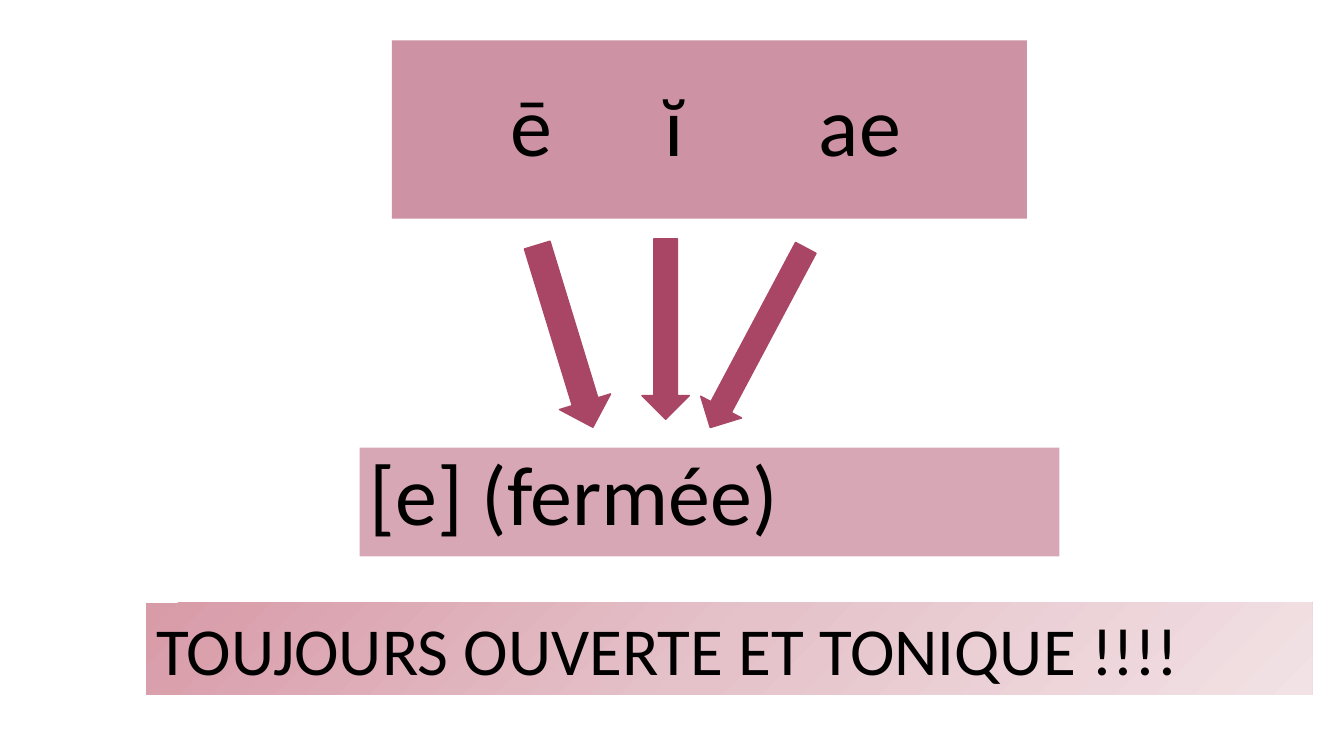
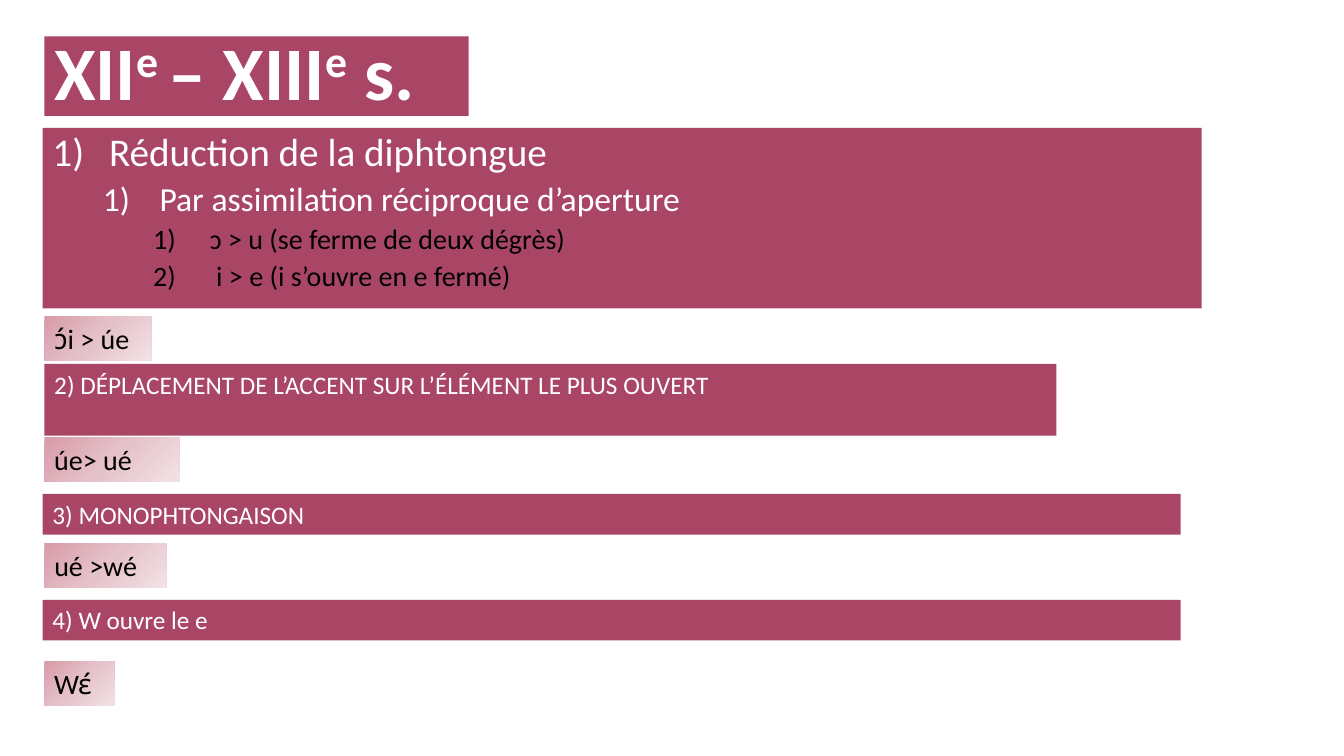
from lxml.etree import SubElement
from pptx import Presentation
from pptx.dml.color import RGBColor as RGB
from pptx.enum.shapes import MSO_SHAPE as SHAPE
from pptx.enum.text import MSO_ANCHOR as ANCHOR, PP_ALIGN as ALIGN
from pptx.oxml import parse_xml
from pptx.oxml.ns import nsdecls, qn
from pptx.util import Pt

COLORS = {
    "rose": "AA4665",
    "pale_start": "D89BA8",
    "pale_mid": "E5C2CA",
    "pale_end": "F2E2E5",
    "black": "000000",
    "white": "FFFFFF",
}


class Deck:
    font = "Calibri"
    gradient = ((0, "pale_start"), (50, "pale_mid"), (100, "pale_end"))

    def __init__(self):
        self.prs = Presentation()
        self.prs.slide_width, self.prs.slide_height = Pt(960), Pt(540)
        self.s = None

    def slide(self):
        self.s = self.prs.slides.add_slide(self.prs.slide_layouts[6])

    def shape(self, kind, x, y, w, h, alpha=None):
        sp = self.s.shapes.add_shape(kind, Pt(x), Pt(y), Pt(w), Pt(h))
        sp.shadow.inherit = False
        sp.fill.solid()
        sp.fill.fore_color.rgb = RGB.from_string(COLORS["rose"])
        sp.line.fill.background()
        if alpha:
            color = sp._element.spPr.find(qn("a:solidFill"))[0]
            SubElement(color, qn("a:alpha")).set("val", str(alpha * 1000))
        return sp

    def style(self, p, size, color, bold=False):
        for r in p.runs:
            r.font.name, r.font.size, r.font.bold = self.font, Pt(size), bold
            r.font.color.rgb = RGB.from_string(COLORS[color])

    def band(self, x, y, w, h, text, size, color="white", alpha=None,
             anchor=ANCHOR.TOP, spacing=1.0):
        sp = self.shape(SHAPE.RECTANGLE, x, y, w, h, alpha)
        tf = sp.text_frame
        tf.word_wrap = True
        tf.vertical_anchor = anchor
        tf.text = text
        p = tf.paragraphs[0]
        p.alignment, p.line_spacing = ALIGN.LEFT, spacing
        self.style(p, size, color)
        return sp

    def pale_band(self, x, y, w, h, text, size):
        sp = self.band(x, y, w, h, text, size, "black")
        stops = "".join(
            f'<a:gs pos="{pos * 1000}"><a:srgbClr val="{COLORS[name]}"/></a:gs>'
            for pos, name in self.gradient)
        spPr = sp._element.spPr
        spPr.replace(spPr.find(qn("a:solidFill")), parse_xml(
            f'<a:gradFill {nsdecls("a")} rotWithShape="1"><a:gsLst>{stops}'
            '</a:gsLst><a:lin ang="2700000" scaled="0"/></a:gradFill>'))

    def columns(self, sp, inset, step):
        tf = sp.text_frame
        tf.margin_left = Pt(inset)
        p = tf.paragraphs[0]
        tabs = SubElement(p._p.get_or_add_pPr(), qn("a:tabLst"))
        for i in range(1, p.text.count("\t") + 1):
            SubElement(tabs, qn("a:tab"), pos=str(Pt(step * i)), algn="l")

    def heading(self, x, y, w, h, parts, size):
        sp = self.band(x, y, w, h, "", size, anchor=ANCHOR.MIDDLE, spacing=0.9)
        p = sp.text_frame.paragraphs[0]
        for text, raised in parts:
            r = p.add_run()
            r.text = text
            if raised:
                r._r.get_or_add_rPr().set("baseline", "30000")
        self.style(p, size, "white", bold=True)

    def outline(self, x, y, w, h, items):
        sp = self.band(x, y, w, h, "\n".join(t for _, t in items), 28)
        looks = ((28, "white"), (24, "white"), (20, "black"))
        for (level, _), p in zip(items, sp.text_frame.paragraphs):
            p.level, p.alignment, p.line_spacing = level, ALIGN.LEFT, 0.9
            p.space_before = Pt(5 if level else 10)
            self.style(p, *looks[level])
            pPr = p._p.get_or_add_pPr()
            pPr.set("marL", str(Pt(40.5 + 36 * level)))
            pPr.set("indent", str(-Pt(40.5)))
            SubElement(pPr, qn("a:buFont"), typeface="+mj-lt")
            SubElement(pPr, qn("a:buAutoNum"), type="arabicParenR")

    def arrow(self, kind, x, y, w, h, angle=0):
        sp = self.shape(kind, x, y, w, h)
        sp.rotation = angle
        sp.line.color.rgb = RGB.from_string(COLORS["rose"])
        sp.line.width = Pt(1)


def vowels(d):
    d.slide()
    sp = d.band(280, 28.8, 453.6, 127.4, "ē\tĭ\tae", 60, "black", 59,
                ANCHOR.MIDDLE, 0.9)
    d.columns(sp, 85, 110)
    sp = d.band(257, 319.7, 499.7, 77.8, "[e] (fermée)", 60, "black", 47,
                spacing=0.9)
    d.arrow(SHAPE.DOWN_ARROW, 458.6, 170.6, 33.8, 128.9)
    d.arrow(SHAPE.UP_ARROW, 524.9, 168.5, 33.1, 145.4, 208)
    d.arrow(SHAPE.DOWN_ARROW, 384.5, 172.1, 38.2, 136.1, 343)
    d.pale_band(104.4, 430.6, 833, 65.5, "TOUJOURS OUVERTE ET TONIQUE !!!!", 48)


def centuries(d):
    left, bar_left = 31.7, 30.4
    d.slide()
    d.heading(left, 25.9, 303.1, 56.9,
              (("XII", False), ("e ", True), ("– XIII", False),
               ("e", True), (" s.", False)), 54)
    d.outline(bar_left, 91.4, 828, 128.9, (
        (0, "Réduction de la diphtongue"),
        (1, "Par assimilation réciproque d’aperture"),
        (2, "ɔ > u (se ferme de deux dégrès)"),
        (2, " i > e (i s’ouvre en e fermé)")))
    for x, y, w, h, text in (
            (left, 260, 722.9, 51.1,
             "2) DÉPLACEMENT DE L’ACCENT SUR L’ÉLÉMENT LE PLUS OUVERT"),
            (bar_left, 352.8, 812.9, 29.1, "3) MONOPHTONGAISON"),
            (bar_left, 428.4, 812.9, 29.1, "4) W ouvre le e")):
        d.band(x, y, w, h, text, 18)
    for y, w, text in ((226, 76.5, "ɔ́i > úe"), (312.4, 96.5, "úe> ué"),
                       (388, 87.1, "ué >wé"), (472.3, 50, "Wɛ́")):
        d.pale_band(left, y, w, 31.5, text, 20)


def main():
    d = Deck()
    vowels(d)
    centuries(d)
    d.prs.save("out.pptx")


if __name__ == "__main__":
    main()
